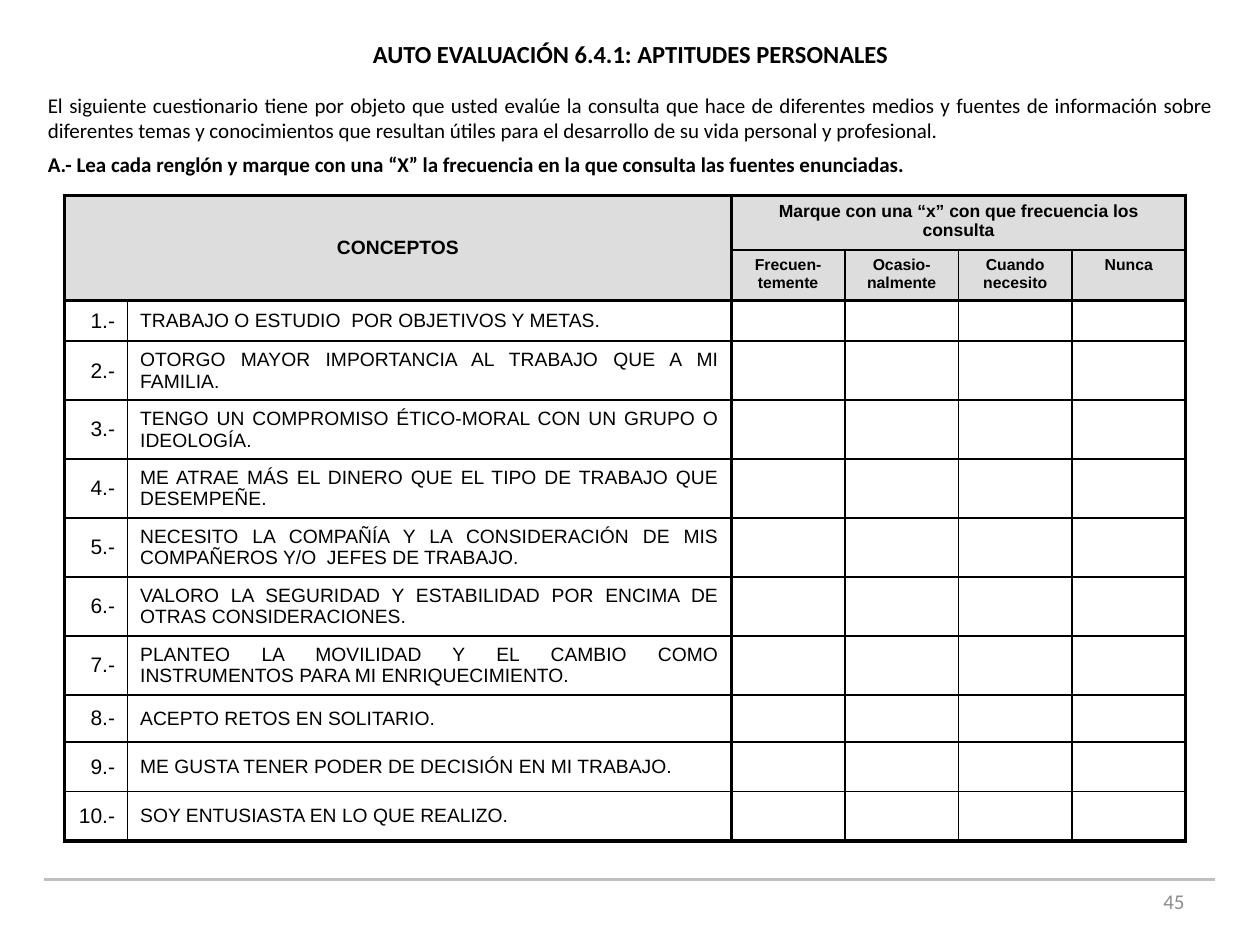
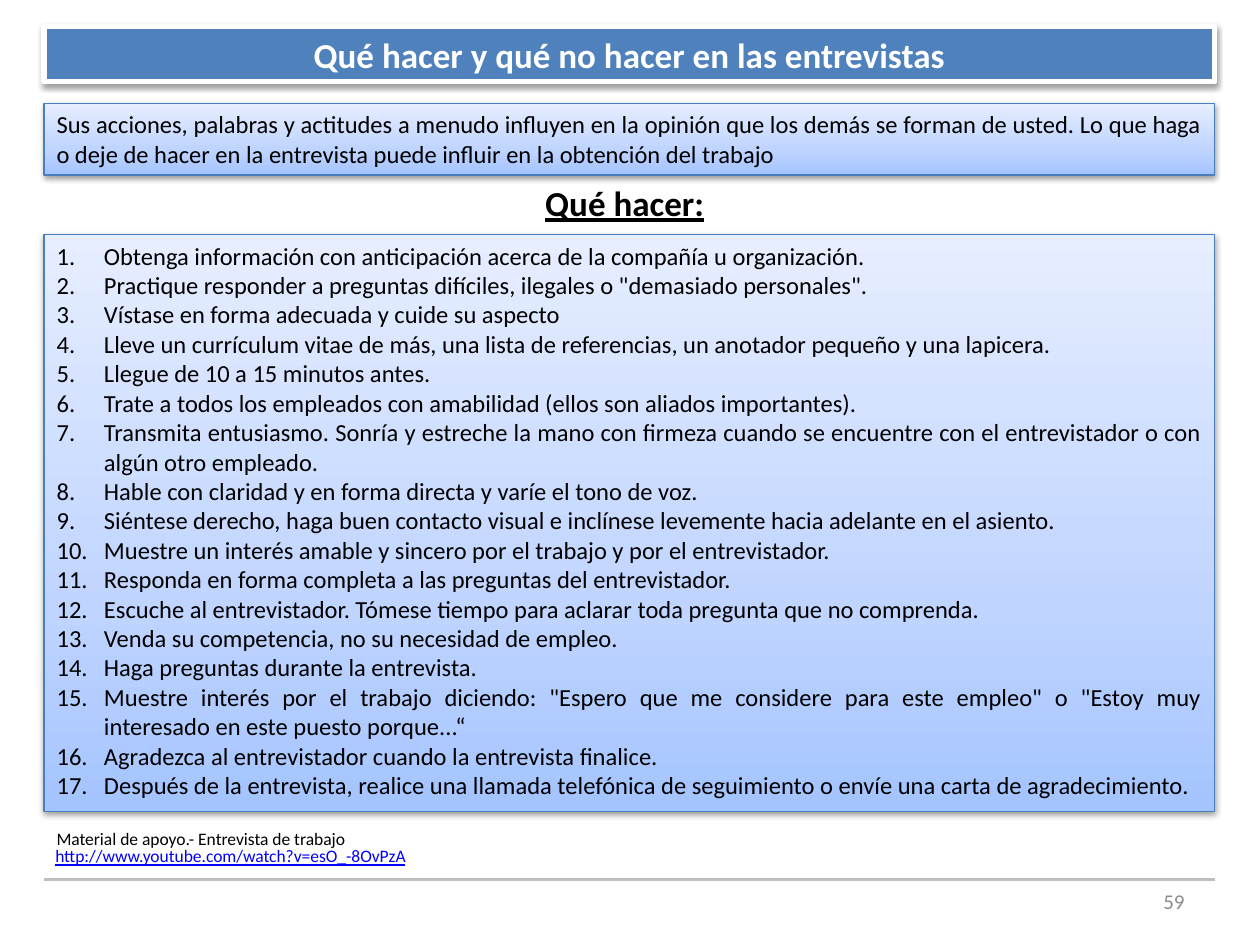
import pptx
import pptx.util
import pptx.dml.color
import pptx.enum.dml
import pptx.enum.shapes
import pptx.enum.text
import pptx.oxml.ns
from lxml import etree

Pt = pptx.util.Pt
qn = pptx.oxml.ns.qn
ALIGN = pptx.enum.text.PP_ALIGN
ANCHOR = pptx.enum.text.MSO_ANCHOR

# Shared look
COLORS = {
    "text": "000000", "white": "FFFFFF", "banner": "4F81BD",
    "panel_line": "4B7EBC", "rule": "BFBFBF", "page": "8C8C8C",
    "link": "0000FF", "header": "DDDDDD", "border": "000000",
}
PANEL_STOPS = [(0, "A4C4FF"), (35, "BFD4FF"), (100, "E6EEFF")]
LEFT, WIDTH = 25.2, 669
TITLE_ONLY, TITLE_AND_CONTENT = 5, 1

# Questionnaire
FREQUENCIES = ["Frecuen-temente", "Ocasio-nalmente", "Cuando necesito", "Nunca"]
CONCEPTS = [
    "TRABAJO O ESTUDIO  POR OBJETIVOS Y METAS.",
    "OTORGO MAYOR IMPORTANCIA AL TRABAJO QUE A MI FAMILIA.",
    "TENGO UN COMPROMISO ÉTICO-MORAL CON UN GRUPO O IDEOLOGÍA.",
    "ME ATRAE MÁS EL DINERO QUE EL TIPO DE TRABAJO QUE DESEMPEÑE.",
    "NECESITO LA COMPAÑÍA Y LA CONSIDERACIÓN DE MIS COMPAÑEROS Y/O  JEFES DE TRABAJO.",
    "VALORO LA SEGURIDAD Y ESTABILIDAD POR ENCIMA DE OTRAS CONSIDERACIONES.",
    "PLANTEO LA MOVILIDAD Y EL CAMBIO COMO INSTRUMENTOS PARA MI ENRIQUECIMIENTO.",
    "ACEPTO RETOS EN SOLITARIO.",
    "ME GUSTA TENER PODER DE DECISIÓN EN MI TRABAJO.",
    "SOY ENTUSIASTA EN LO QUE REALIZO.",
]
COLUMN_WIDTHS = [36, 345] + [64.9] * 4
ROW_HEIGHTS = [31.4, 28.8, 23.2] + [33.7] * 6 + [27, 28.3, 28.3]
# Border weight of each grid line, left to right and top to bottom
VERTICAL_LINES = [2.25, 1, 2, 1, 1, 1, 2.25]
HORIZONTAL_LINES = [2.25, 1, 2] + [1] * 9 + [2.25]

# Interview advice
ADVICE = [
    "Obtenga información con anticipación acerca de la compañía u organización.",
    "Practique responder a preguntas difíciles, ilegales o \"demasiado personales\".",
    "Vístase en forma adecuada y cuide su aspecto",
    "Lleve un currículum vitae de más, una lista de referencias, un anotador pequeño y una lapicera.",
    "Llegue de 10 a 15 minutos antes.",
    "Trate a todos los empleados con amabilidad (ellos son aliados importantes).",
    "Transmita entusiasmo. Sonría y estreche la mano con firmeza cuando se encuentre "
    "con el entrevistador o con algún otro empleado.",
    "Hable con claridad y en forma directa y varíe el tono de voz.",
    "Siéntese derecho, haga buen contacto visual e inclínese levemente hacia adelante en el asiento.",
    "Muestre un interés amable y sincero por el trabajo y por el entrevistador.",
    "Responda en forma completa a las preguntas del entrevistador.",
    "Escuche al entrevistador. Tómese tiempo para aclarar toda pregunta que no comprenda.",
    "Venda su competencia, no su necesidad de empleo.",
    "Haga preguntas durante la entrevista.",
    "Muestre interés por el trabajo diciendo: \"Espero que me considere para este empleo\" "
    "o \"Estoy muy interesado en este puesto porque...“",
    "Agradezca al entrevistador cuando la entrevista finalice.",
    "Después de la entrevista, realice una llamada telefónica de seguimiento o envíe "
    "una carta de agradecimiento.",
]


def rgb(name):
    return pptx.dml.color.RGBColor.from_string(COLORS[name])


def add_xml(parent, tag, **attributes):
    return etree.SubElement(parent, qn(tag), attributes)


def write(frame, text, size, color="text", bold=False, underline=False,
          align=ALIGN.LEFT, anchor=ANCHOR.TOP, font="Calibri"):
    frame.text = text
    frame.word_wrap = True
    frame.auto_size = pptx.enum.text.MSO_AUTO_SIZE.NONE
    frame.vertical_anchor = anchor
    for paragraph in frame.paragraphs:
        paragraph.alignment = align
        paragraph.space_before = Pt(0)
        for run in paragraph.runs:
            run.font.name = font
            run.font.size = Pt(size)
            run.font.bold = bold
            run.font.underline = underline
            run.font.color.rgb = rgb(color)


def place(shape, left, top, width, height):
    shape.left, shape.top = Pt(left), Pt(top)
    shape.width, shape.height = Pt(width), Pt(height)


def add_label(slide, box, text, size, **style):
    label = slide.shapes.add_textbox(*map(Pt, box))
    write(label.text_frame, text, size, **style)


def add_soft_shadow(shape):
    shape.shadow.inherit = False
    effects = shape.element.spPr.find(qn("a:effectLst"))
    shadow = add_xml(effects, "a:outerShdw", blurRad=str(Pt(3.1)), dist=str(Pt(1.6)),
                     dir="5400000", rotWithShape="0")
    black = add_xml(shadow, "a:srgbClr", val="000000")
    add_xml(black, "a:alpha", val="38000")


def style_panel(shape):
    shape.fill.gradient()
    shape.fill.gradient_angle = 90
    stops = shape.element.spPr.find(".//" + qn("a:gsLst"))
    stops.clear()
    for percent, color in PANEL_STOPS:
        stop = add_xml(stops, "a:gs", pos=str(percent * 1000))
        add_xml(stop, "a:srgbClr", val=color)
    shape.line.color.rgb = rgb("panel_line")
    shape.line.width = Pt(0.75)
    add_soft_shadow(shape)


def style_banner(title):
    title.fill.solid()
    title.fill.fore_color.rgb = rgb("banner")
    title.line.color.rgb = rgb("white")
    title.line.width = Pt(3)
    add_soft_shadow(title)


def number_paragraphs(frame, indent):
    for paragraph in frame.paragraphs:
        properties = paragraph._p.get_or_add_pPr()
        properties.set("marL", str(Pt(indent)))
        properties.set("indent", str(-Pt(indent)))
        add_xml(properties, "a:buFont", typeface="Calibri")
        add_xml(properties, "a:buAutoNum", type="arabicPeriod")


def add_footer(slide, page):
    rule = slide.shapes.add_connector(pptx.enum.shapes.MSO_CONNECTOR.STRAIGHT,
                                      Pt(LEFT), Pt(502.6), Pt(LEFT + WIDTH), Pt(502.6))
    rule.line.color.rgb = rgb("rule")
    rule.line.width = Pt(2)
    add_xml(rule.element.spPr, "a:effectLst")
    add_label(slide, (516.2, 500.4, 167.8, 28.8), str(page), 12, color="page",
              align=ALIGN.RIGHT, anchor=ANCHOR.MIDDLE)


# Table
def set_borders(cell, row, column):
    properties = cell._tc.get_or_add_tcPr()
    weights = {
        "a:lnL": VERTICAL_LINES[column],
        "a:lnR": VERTICAL_LINES[column + cell.span_width],
        "a:lnT": HORIZONTAL_LINES[row],
        "a:lnB": HORIZONTAL_LINES[row + cell.span_height],
    }
    for position, (tag, weight) in enumerate(weights.items()):
        border = etree.Element(qn(tag), w=str(Pt(weight)))
        add_xml(add_xml(border, "a:solidFill"), "a:srgbClr", val=COLORS["border"])
        properties.insert(position, border)


def fill_cell(cell, text, size, **style):
    write(cell.text_frame, text, size, font="Arial", **style)
    cell.vertical_anchor = style.get("anchor", ANCHOR.TOP)


def add_questionnaire(slide):
    table = slide.shapes.add_table(
        len(ROW_HEIGHTS), len(COLUMN_WIDTHS), Pt(36.9), Pt(111.6),
        Pt(sum(COLUMN_WIDTHS)), Pt(sum(ROW_HEIGHTS))).table
    for column, width in zip(table.columns, COLUMN_WIDTHS):
        column.width = Pt(width)
    for row, height in zip(table.rows, ROW_HEIGHTS):
        row.height = Pt(height)

    # Header
    table.cell(0, 0).merge(table.cell(1, 1))
    table.cell(0, 2).merge(table.cell(0, 5))
    heading = {"bold": True, "align": ALIGN.CENTER}
    fill_cell(table.cell(0, 0), "CONCEPTOS", 11, anchor=ANCHOR.MIDDLE, **heading)
    fill_cell(table.cell(0, 2), "Marque con una “x” con que frecuencia los consulta",
              10, **heading)
    for column, frequency in enumerate(FREQUENCIES, 2):
        fill_cell(table.cell(1, column), frequency, 9, **heading)

    # Concepts
    for number, concept in enumerate(CONCEPTS, 1):
        fill_cell(table.cell(number + 1, 0), f"{number}.-", 12,
                  align=ALIGN.RIGHT, anchor=ANCHOR.MIDDLE)
        fill_cell(table.cell(number + 1, 1), concept, 11,
                  align=ALIGN.JUSTIFY, anchor=ANCHOR.MIDDLE)

    # Fills, borders and the height of empty cells
    for row in range(len(ROW_HEIGHTS)):
        for column in range(len(COLUMN_WIDTHS)):
            cell = table.cell(row, column)
            cell.fill.solid()
            cell.fill.fore_color.rgb = rgb("header" if row < 2 else "white")
            set_borders(cell, row, column)
            if not cell.text_frame.text:
                add_xml(cell.text_frame.paragraphs[0]._p, "a:endParaRPr", sz="1000")


def build_self_evaluation(deck):
    slide = deck.slides.add_slide(deck.slide_layouts[TITLE_ONLY])
    left, width = 20.2, 680.4
    title = slide.shapes.title
    place(title, left, 18.7, width, 24.5)
    write(title.text_frame, "AUTO EVALUACIÓN 6.4.1: APTITUDES PERSONALES", 14,
          bold=True, align=ALIGN.CENTER, anchor=ANCHOR.MIDDLE)
    paragraph_style = {"align": ALIGN.JUSTIFY, "anchor": ANCHOR.MIDDLE}
    add_label(slide, (left, 49, width, 36),
              "El siguiente cuestionario tiene por objeto que usted evalúe la consulta que hace "
              "de diferentes medios y fuentes de información sobre diferentes temas y "
              "conocimientos que resultan útiles para el desarrollo de su vida personal y "
              "profesional.", 12, **paragraph_style)
    add_label(slide, (left, 83, width, 21.6),
              "A.- Lea cada renglón y marque con una “X” la frecuencia en la que consulta "
              "las fuentes enunciadas.", 12, bold=True, **paragraph_style)
    add_questionnaire(slide)
    add_footer(slide, 45)


def build_interview_advice(deck):
    slide = deck.slides.add_slide(deck.slide_layouts[TITLE_AND_CONTENT])
    title, advice = slide.shapes.title, slide.placeholders[1]

    # Banner and introduction
    place(title, LEFT, 15.1, WIDTH, 31.7)
    style_banner(title)
    write(title.text_frame, "Qué hacer y qué no hacer en las entrevistas", 20,
          color="white", bold=True, align=ALIGN.CENTER, anchor=ANCHOR.MIDDLE)
    intro = slide.shapes.add_shape(pptx.enum.shapes.MSO_SHAPE.RECTANGLE,
                                   Pt(LEFT), Pt(59), Pt(WIDTH), Pt(41))
    style_panel(intro)
    write(intro.text_frame,
          "Sus acciones, palabras y actitudes a menudo influyen en la opinión que los demás "
          "se forman de usted. Lo que haga o deje de hacer en la entrevista puede influir en "
          "la obtención del trabajo", 14, align=ALIGN.JUSTIFY)

    # Numbered advice
    add_label(slide, (297, 100.1, 120, 31.5), "Qué hacer:", 20, bold=True,
              underline=True, align=ALIGN.CENTER)
    place(advice, LEFT, 133.9, WIDTH, 329.8)
    style_panel(advice)
    write(advice.text_frame, "\n".join(ADVICE), 14, align=ALIGN.JUSTIFY)
    number_paragraphs(advice.text_frame, 27)

    # Support material
    add_label(slide, (LEFT, 469.4, 240, 19.4), "Material de apoyo.- Entrevista de trabajo", 10)
    add_label(slide, (24.5, 479.5, 395, 19.4), "http://www.youtube.com/watch?v=esO_-8OvPzA",
              10, color="link", underline=True)
    add_footer(slide, 59)


def main():
    deck = pptx.Presentation()
    deck.slide_width, deck.slide_height = Pt(720), Pt(540)
    build_self_evaluation(deck)
    build_interview_advice(deck)
    deck.save("out.pptx")


if __name__ == "__main__":
    main()
